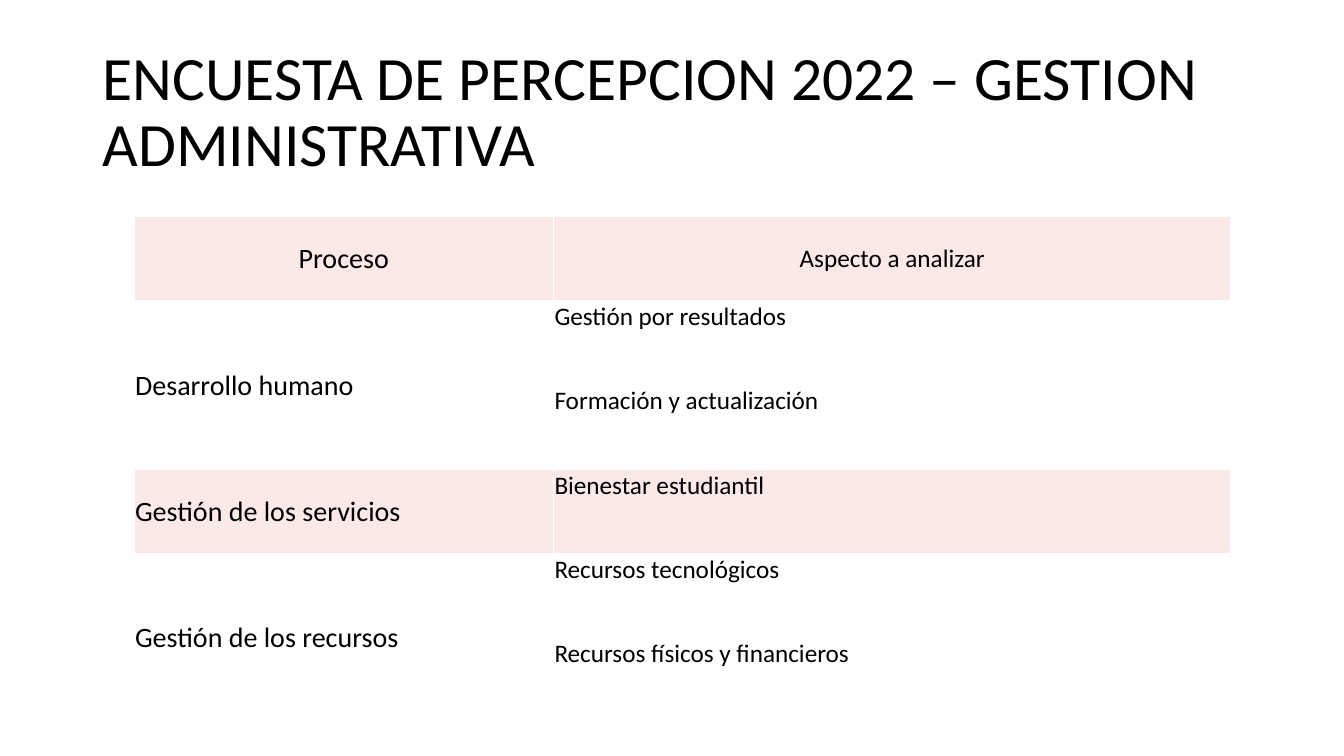
import lxml.etree
import pptx
import pptx.dml.color
import pptx.enum.text
import pptx.oxml.ns
import pptx.util

Inches = pptx.util.Inches
ALIGN = pptx.enum.text.PP_ALIGN
ANCHOR = pptx.enum.text.MSO_ANCHOR

FONT = "Calibri"
BLACK, WHITE, PINK = "000000", "FFFFFF", "FBE9E8"
COLUMN_WIDTHS = (4.16, 6.72)
ROW_HEIGHT = 0.835
HEADINGS = ("Proceso", "Aspecto a analizar")
# Each process with the aspects analysed under it
PROCESSES = (
    ("Desarrollo humano", ("Gestión por resultados", "Formación y actualización")),
    ("Gestión de los servicios", ("Bienestar estudiantil",)),
    ("Gestión de los recursos", ("Recursos tecnológicos", "Recursos físicos y financieros")),
)


def color(hex_value):
    return pptx.dml.color.RGBColor.from_string(hex_value)


def write(paragraph, words, size, align):
    paragraph.alignment = align
    run = paragraph.add_run()
    run.text = words
    run.font.size = pptx.util.Pt(size)
    run.font.name = FONT
    run.font.color.rgb = color(BLACK)


def add_title(slide, words):
    title = slide.shapes.add_textbox(Inches(0.92), Inches(0.4), Inches(11.5), Inches(1.45))
    frame = title.text_frame
    frame.word_wrap = True
    frame.vertical_anchor = ANCHOR.MIDDLE
    frame.paragraphs[0].line_spacing = 0.9
    write(frame.paragraphs[0], words, 44, ALIGN.LEFT)


def style_cell(cell, fill):
    cell.margin_left = cell.margin_right = cell.margin_top = Inches(0.01)
    cell.margin_bottom = 0
    # White borders go before the fill in the cell properties
    properties = cell._tc.get_or_add_tcPr()
    for side in ("a:lnL", "a:lnR", "a:lnT", "a:lnB"):
        border = lxml.etree.SubElement(properties, pptx.oxml.ns.qn(side), w=str(pptx.util.Pt(1)))
        paint = lxml.etree.SubElement(border, pptx.oxml.ns.qn("a:solidFill"))
        lxml.etree.SubElement(paint, pptx.oxml.ns.qn("a:srgbClr"), val=WHITE)
    cell.fill.solid()
    cell.fill.fore_color.rgb = color(fill)


def fill_cell(cell, words, size, align, anchor):
    cell.vertical_anchor = anchor
    write(cell.text_frame.paragraphs[0], words, size, align)


def add_process_table(slide):
    row_count = 1 + sum(len(aspects) for _, aspects in PROCESSES)
    table = slide.shapes.add_table(
        row_count, len(COLUMN_WIDTHS), Inches(1.33), Inches(2.15),
        Inches(sum(COLUMN_WIDTHS)), Inches(ROW_HEIGHT * row_count)).table
    for column, width in zip(table.columns, COLUMN_WIDTHS):
        column.width = Inches(width)
    for row in table.rows:
        row.height = Inches(ROW_HEIGHT)

    # Heading row
    for column, (heading, size) in enumerate(zip(HEADINGS, (20, 18))):
        style_cell(table.cell(0, column), PINK)
        fill_cell(table.cell(0, column), heading, size, ALIGN.CENTER, ANCHOR.MIDDLE)

    # One band per process, alternating white and pink
    first = 1
    for band, (process, aspects) in enumerate(PROCESSES):
        for row, aspect in enumerate(aspects, first):
            for column in range(len(COLUMN_WIDTHS)):
                style_cell(table.cell(row, column), (WHITE, PINK)[band % 2])
            fill_cell(table.cell(row, 1), aspect, 18, ALIGN.JUSTIFY, ANCHOR.TOP)
        last = first + len(aspects) - 1
        if last > first:
            table.cell(first, 0).merge(table.cell(last, 0))
        fill_cell(table.cell(first, 0), process, 20, ALIGN.LEFT, ANCHOR.MIDDLE)
        first = last + 1


def main():
    deck = pptx.Presentation()
    deck.slide_width, deck.slide_height = Inches(13.33), Inches(7.5)
    slide = deck.slides.add_slide(deck.slide_layouts[6])
    slide.background.fill.solid()
    slide.background.fill.fore_color.rgb = color(WHITE)
    add_title(slide, "ENCUESTA DE PERCEPCION 2022 – GESTION ADMINISTRATIVA")
    add_process_table(slide)
    deck.save("out.pptx")


if __name__ == "__main__":
    main()
